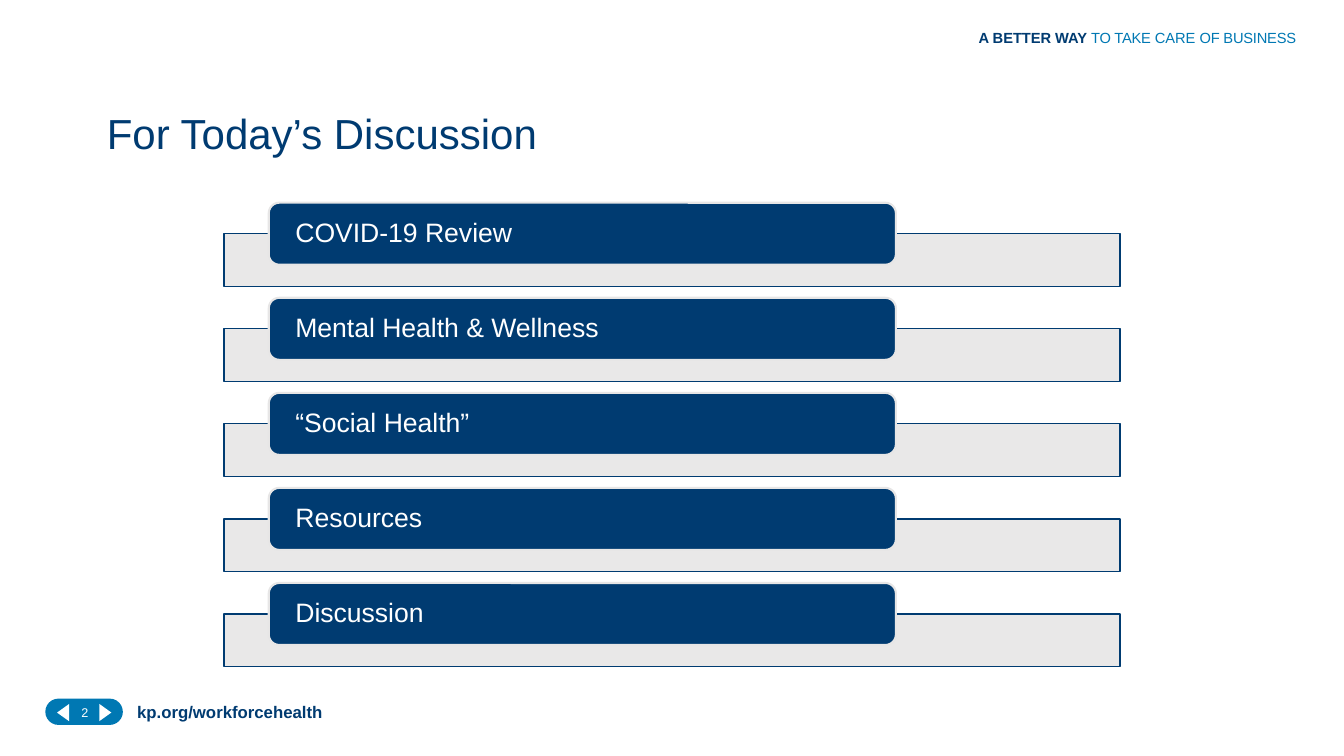
from lxml import etree
from pptx import Presentation
from pptx.dml.color import RGBColor
from pptx.enum.shapes import MSO_SHAPE
from pptx.enum.text import MSO_ANCHOR, MSO_AUTO_SIZE, PP_ALIGN
from pptx.oxml.ns import qn
from pptx.util import Pt

RECTANGLE = MSO_SHAPE.RECTANGLE
ROUNDED = MSO_SHAPE.ROUNDED_RECTANGLE
TRIANGLE = MSO_SHAPE.ISOSCELES_TRIANGLE
TOP, MIDDLE = MSO_ANCHOR.TOP, MSO_ANCHOR.MIDDLE
LEFT = PP_ALIGN.LEFT
NO_AUTOFIT = MSO_AUTO_SIZE.NONE

FONT = "Arial"
COLORS = {"navy": "003B71", "blue": "0078B3", "gray": "E7E6E6", "white": "FFFFFF"}
TOPICS = [
    "COVID-19 Review",
    "Mental Health & Wellness",
    "“Social Health”",
    "Resources",
    "Discussion",
]
TOPIC_PITCH = 67.9


class SlideBuilder:
    def __init__(self, slide):
        self.slide = slide

    def color(self, name):
        return RGBColor.from_string(COLORS[name])

    def fill_text(self, shape, runs, size, insets=(7.2, 3.6, 7.2, 3.6), anchor=TOP, line_spacing=None):
        frame = shape.text_frame
        frame.word_wrap = True
        frame.auto_size = NO_AUTOFIT
        frame.vertical_anchor = anchor
        frame.margin_left, frame.margin_top, frame.margin_right, frame.margin_bottom = map(Pt, insets)
        paragraph = frame.paragraphs[0]
        paragraph.alignment = LEFT
        if line_spacing:
            paragraph.line_spacing = line_spacing
        for text, color, bold, spacing in runs:
            run = paragraph.add_run()
            run.text = text
            run.font.name = FONT
            run.font.size = Pt(size)
            run.font.bold = bold
            run.font.color.rgb = self.color(color)
            if spacing:
                run._r.get_or_add_rPr().set("spc", str(spacing))

    def title(self, text, box, size):
        shape = self.slide.shapes.title
        shape.left, shape.top, shape.width, shape.height = map(Pt, box)
        self.fill_text(shape, [(text, "navy", False, 0)], size, anchor=MIDDLE)

    def text(self, runs, box, size, **layout):
        shape = self.slide.shapes.add_textbox(*map(Pt, box))
        self.fill_text(shape, runs, size, **layout)

    def shape(self, kind, box, fill, line=None, line_width=1, opacity=None, rotation=0, corner=None):
        shape = self.slide.shapes.add_shape(kind, *map(Pt, box))
        shape.shadow.inherit = False
        shape.rotation = rotation
        shape.fill.solid()
        shape.fill.fore_color.rgb = self.color(fill)
        if opacity:
            fill_color = shape._element.spPr.find(qn("a:solidFill"))[0]
            etree.SubElement(fill_color, qn("a:alpha")).set("val", str(opacity * 1000))
        if line:
            shape.line.color.rgb = self.color(line)
            shape.line.width = Pt(line_width)
        else:
            shape.line.fill.background()
        if corner is not None:
            shape.adjustments[0] = corner
        return shape

    def topic(self, text, top):
        self.shape(RECTANGLE, (160, top + 22.1, 640, 37.8), "gray", "navy", opacity=90)
        label = self.shape(ROUNDED, (192, top, 448, 44.3), "navy", "gray", 1.5, corner=0.17)
        self.fill_text(label, [(text, "white", False, 0)], 19,
                       insets=(16.8, 0, 16.8, 0), anchor=MIDDLE, line_spacing=0.9)

    def page_marker(self, number):
        self.shape(ROUNDED, (32.4, 499, 55.4, 18.8), "blue", corner=0.5)
        for left, rotation in ((38.9, 270), (69.1, 90)):
            self.shape(TRIANGLE, (left, 504.7, 12.3, 8.6), "white", rotation=rotation)
        self.text([(number, "white", False, 0)], (51, 499.7, 46, 28.8), 9)


def main():
    presentation = Presentation()
    presentation.slide_width = Pt(960)
    presentation.slide_height = Pt(540)
    builder = SlideBuilder(presentation.slides.add_slide(presentation.slide_layouts[5]))

    builder.page_marker("2")
    builder.text([("kp.org/workforcehealth", "navy", True, 0)], (97.9, 497.5, 378, 21.6), 12,
                 insets=(0, 3.6, 7.2, 3.6))
    builder.title("For Today’s Discussion", (69.1, 55.4, 695.5, 79.2), 30)
    slogan = [
        ("A BETTER WAY ", "navy", True, 0),
        ("TO TAKE ", "blue", False, -10),
        ("CARE ", "blue", False, 0),
        ("OF BUSINESS", "blue", False, -10),
    ]
    builder.text(slogan, (698.4, 18.7, 234.7, 13.9), 10.5, insets=(0.7, 1.8, 0, 0))
    for index, topic in enumerate(TOPICS):
        builder.topic(topic, 144.8 + index * TOPIC_PITCH)

    presentation.save("out.pptx")


if __name__ == "__main__":
    main()
